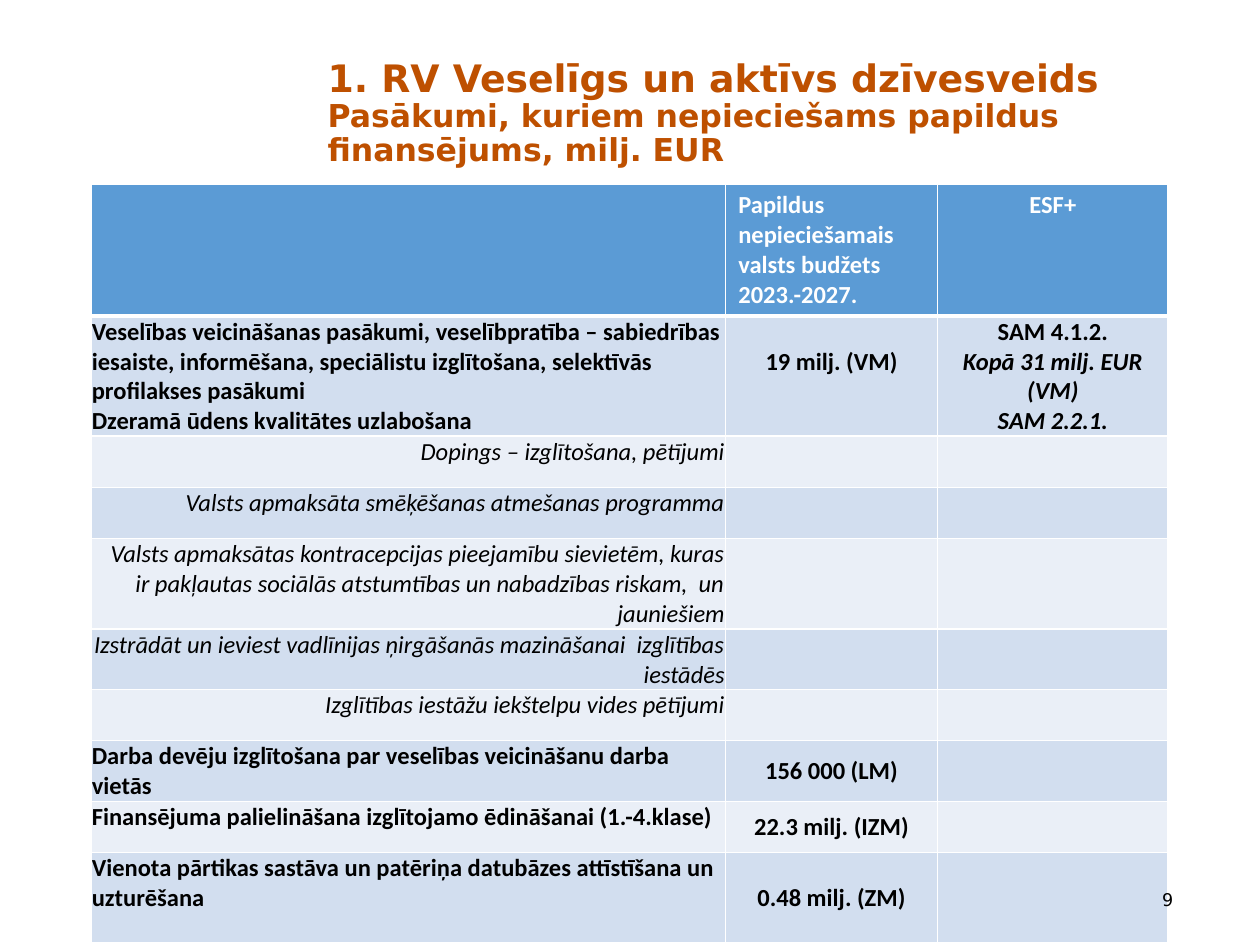
from dataclasses import dataclass

from lxml import etree
from pptx import Presentation
from pptx import util as u
from pptx.dml.color import RGBColor
from pptx.enum import text
from pptx.oxml.ns import qn

LEFT, CENTER, RIGHT = text.PP_ALIGN.LEFT, text.PP_ALIGN.CENTER, text.PP_ALIGN.RIGHT
TOP, MIDDLE = text.MSO_ANCHOR.TOP, text.MSO_ANCHOR.MIDDLE


@dataclass(frozen=True)
class Theme:
    heading_font: str = "DejaVu Sans"
    table_font: str = "Calibri"
    accent: str = "BE5000"
    ink: str = "000000"
    white: str = "FFFFFF"
    header: str = "5B9BD5"
    bands: tuple = ("D2DEEF", "EAEFF7")
    title_size: float = 21.6
    subtitle_size: float = 18
    table_size: float = 14
    number_size: float = 10
    rule: float = 1
    header_rule: float = 3


@dataclass(frozen=True)
class Entry:
    lines: tuple = ()
    align: int = LEFT
    anchor: int = TOP
    bold: bool = True
    italic_lines: tuple = ()
    bottom: float = 0


class SlideBuilder:
    def __init__(self, theme, slide):
        self.theme = theme
        self.slide = slide

    def style(self, font, name, size, color, bold=False, italic=False):
        font.name = name
        font.size = u.Pt(size)
        font.color.rgb = RGBColor.from_string(color)
        font.bold = bold
        font.italic = italic

    def title(self, heading, subtitle, left, top, width, height):
        theme = self.theme
        title = self.slide.shapes.title
        title.left, title.top = u.Cm(left), u.Cm(top)
        title.width, title.height = u.Cm(width), u.Cm(height)
        frame = title.text_frame
        frame.text = f"{heading}\v{subtitle}"
        frame.word_wrap = True
        frame.auto_size = text.MSO_AUTO_SIZE.NONE
        frame.vertical_anchor = TOP
        paragraph = frame.paragraphs[0]
        paragraph.alignment = LEFT
        paragraph.line_spacing = 0.9
        for run, size in zip(paragraph.runs, (theme.title_size, theme.subtitle_size)):
            self.style(run.font, theme.heading_font, size, theme.accent, bold=True)

    def borders(self, cell, **widths):
        properties = cell._tc.get_or_add_tcPr()
        for side in ("L", "R", "T", "B"):
            width = u.Pt(widths.get(side, self.theme.rule))
            line = etree.SubElement(properties, qn(f"a:ln{side}"), w=str(width))
            fill = etree.SubElement(line, qn("a:solidFill"))
            etree.SubElement(fill, qn("a:srgbClr"), val=self.theme.white)

    def cell(self, cell, entry, fill, color):
        cell.fill.solid()
        cell.fill.fore_color.rgb = RGBColor.from_string(fill)
        cell.vertical_anchor = entry.anchor
        cell.text_frame.text = "\n".join(entry.lines)
        for index, paragraph in enumerate(cell.text_frame.paragraphs):
            paragraph.alignment = entry.align
            fonts = [run.font for run in paragraph.runs] or [paragraph.font]
            for font in fonts:
                self.style(font, self.theme.table_font, self.theme.table_size, color,
                           entry.bold, index in entry.italic_lines)

    def table(self, headings, measures, left, top, widths, heights):
        theme = self.theme
        rows = [headings, *measures]
        table = self.slide.shapes.add_table(
            len(rows), len(widths), u.Cm(left), u.Cm(top),
            u.Cm(sum(widths)), u.Cm(sum(heights))).table
        for column, width in zip(table.columns, widths):
            column.width = u.Cm(width)
        for r, (row, height) in enumerate(zip(rows, heights)):
            table.rows[r].height = u.Cm(height)
            for c, entry in enumerate(row):
                cell = table.cell(r, c)
                if r == 0:
                    self.borders(cell, B=theme.header_rule)
                    self.cell(cell, entry, theme.header, theme.white)
                    continue
                self.borders(cell, T=theme.header_rule if r == 1 else theme.rule)
                cell.margin_left = cell.margin_right = cell.margin_top = u.Cm(0.02)
                cell.margin_bottom = u.Cm(entry.bottom)
                self.cell(cell, entry, theme.bands[(r - 1) % 2], theme.ink)

    def page_number(self, number, left, top, width, height):
        frame = self.slide.shapes.add_textbox(
            u.Cm(left), u.Cm(top), u.Cm(width), u.Cm(height)).text_frame
        frame.text = number
        frame.word_wrap = True
        frame.vertical_anchor = MIDDLE
        paragraph = frame.paragraphs[0]
        paragraph.alignment = RIGHT
        self.style(paragraph.runs[0].font, self.theme.heading_font,
                   self.theme.number_size, self.theme.ink)


def measure(lines, budget=None, fund=Entry(), bottom=0):
    amount = Entry((budget,), CENTER, MIDDLE, bottom=bottom) if budget else Entry()
    return Entry(lines), amount, fund


def detail(line):
    return Entry((line,), RIGHT, bold=False, italic_lines=(0,)), Entry(), Entry()


def main():
    deck = Presentation()
    deck.slide_width, deck.slide_height = u.Cm(25.4), u.Cm(19.05)
    title_only = deck.slide_layouts[5]
    builder = SlideBuilder(Theme(), deck.slides.add_slide(title_only))

    builder.title("1. RV Veselīgs un aktīvs dzīvesveids",
                  "Pasākumi, kuriem nepieciešams papildus finansējums, milj. EUR",
                  6.35, 1.07, 17.58, 2.64)

    headings = (Entry(),
                Entry(("Papildus nepieciešamais valsts budžets 2023.-2027.",)),
                Entry(("ESF+",), CENTER))
    health_fund = Entry(("SAM 4.1.2.", "Kopā 31 milj. EUR (VM)", "SAM 2.2.1."),
                        CENTER, MIDDLE, italic_lines=(1, 2))
    measures = [
        measure(("Veselības veicināšanas pasākumi, veselībpratība – sabiedrības iesaiste, "
                 "informēšana, speciālistu izglītošana, selektīvās profilakses pasākumi",
                 "Dzeramā ūdens kvalitātes uzlabošana"),
                "19 milj. (VM)", health_fund, bottom=0.6),
        detail("Dopings – izglītošana, pētījumi"),
        detail("Valsts apmaksāta smēķēšanas atmešanas programma"),
        detail("Valsts apmaksātas kontracepcijas pieejamību sievietēm, kuras ir pakļautas "
               "sociālās atstumtības un nabadzības riskam,  un jauniešiem"),
        detail("Izstrādāt un ieviest vadlīnijas ņirgāšanās mazināšanai  izglītības iestādēs"),
        detail("Izglītības iestāžu iekštelpu vides pētījumi"),
        measure(("Darba devēju izglītošana par veselības veicināšanu darba vietās",),
                "156 000 (LM)"),
        measure(("Finansējuma palielināšana izglītojamo ēdināšanai (1.-4.klase)",),
                "22.3 milj. (IZM)"),
        measure(("Vienota pārtikas sastāva un patēriņa datubāzes attīstīšana un uzturēšana",),
                "0.48 milj. (ZM)"),
    ]
    heights = [2.64, 2.4, 1.03, 1.03, 1.82, 1.21, 1.03, 1.21, 1.03, 1.82]
    builder.table(headings, measures, 1.83, 3.71, (12.8, 4.27, 4.65), heights)
    builder.page_number("9", 21.74, 17.63, 2.16, 1.02)

    deck.save("out.pptx")


if __name__ == "__main__":
    main()
